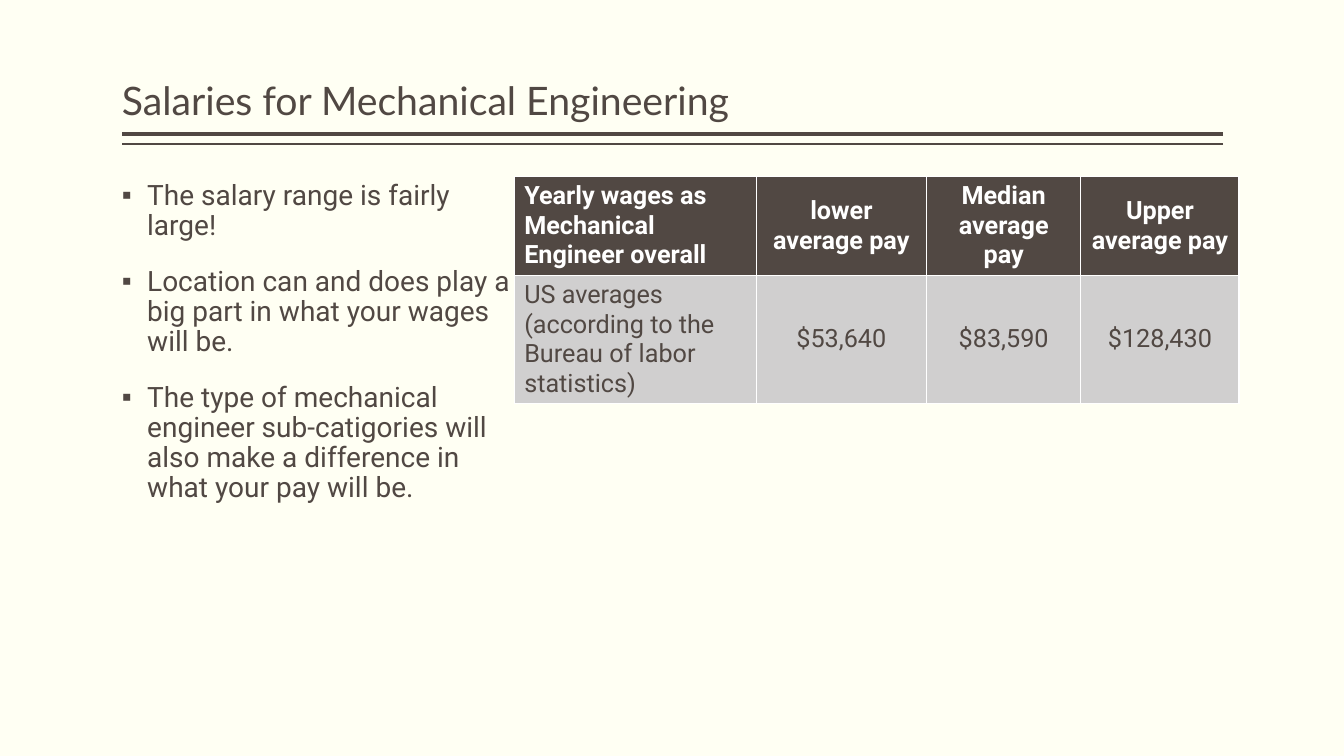
from lxml.etree import SubElement
from pptx import Presentation
from pptx.dml.color import RGBColor
from pptx.enum.shapes import MSO_CONNECTOR as LINK
from pptx.enum.text import MSO_ANCHOR as ANCHOR, MSO_AUTO_SIZE as FIT, PP_ALIGN as ALIGN
from pptx.oxml.ns import qn
from pptx.util import Inches, Pt

TITLE = "Salaries for Mechanical Engineering"
POINTS = [
    "The salary range is fairly large!",
    "Location can and does play a big part in what your wages will be.",
    "The type of mechanical engineer sub-catigories will also make a difference in what your pay will be.",
]
WAGES = [
    ("Yearly wages as Mechanical Engineer overall", "lower average pay",
     "Median average pay", "Upper average pay"),
    ("US averages (according to the Bureau of labor statistics)",
     "$53,640", "$83,590", "$128,430"),
]
COLS = (2.4, 1.69, 1.53, 1.57)
ROWS = (0.96, 1.27)
RULES = [(1.33, 3), (1.43, 1)]

BROWN = RGBColor(0x51, 0x48, 0x43)
CREAM = RGBColor(0xFF, 0xFF, 0xF3)
WHITE = RGBColor(0xFF, 0xFF, 0xFF)
GRAY = RGBColor(0xD0, 0xCF, 0xCF)

LEFT, WIDTH, TOP = 1.21, 10.92, 1.75
SPLIT = 5.1


def style(para, face, size, color, bold=False):
    for run in para.runs:
        run.font.name = face
        run.font.size = Pt(size)
        run.font.color.rgb = color
        run.font.bold = bold


def place(shape, left, top, width, height):
    shape.left, shape.top = Inches(left), Inches(top)
    shape.width, shape.height = Inches(width), Inches(height)
    frame = shape.text_frame
    frame.margin_left = frame.margin_right = 0
    frame.margin_top = frame.margin_bottom = Inches(0.05)
    frame.word_wrap = True
    frame.auto_size = FIT.NONE
    return frame


def add_rule(slide, y, weight):
    rule = slide.shapes.add_connector(
        LINK.STRAIGHT, Inches(LEFT + WIDTH), Inches(y), Inches(LEFT), Inches(y))
    rule.line.color.rgb = BROWN
    rule.line.width = Pt(weight)
    SubElement(rule._element.spPr, qn("a:effectLst"))


def add_title(slide):
    frame = place(slide.shapes.title, LEFT, 0.08, WIDTH, 1.2)
    frame.vertical_anchor = ANCHOR.BOTTOM
    frame.text = TITLE
    para = frame.paragraphs[0]
    para.alignment = ALIGN.LEFT
    para.line_spacing = 0.9
    style(para, "Lato", 28, BROWN)


def add_points(slide):
    frame = place(slide.placeholders[1], LEFT, TOP, SPLIT - LEFT, 5)
    frame.vertical_anchor = ANCHOR.TOP
    frame.text = "\n".join(POINTS)
    for para in frame.paragraphs:
        para.alignment = ALIGN.LEFT
        para.line_spacing = 0.9
        para.space_before = Pt(18)
        props = para._p.get_or_add_pPr()
        props.set("marL", str(Inches(0.25)))
        props.set("indent", str(-Inches(0.25)))
        SubElement(props, qn("a:buChar"), char="▪")
        style(para, "Roboto", 20, BROWN)


def add_wages(slide):
    table = slide.shapes.add_table(
        len(ROWS), len(COLS), Inches(SPLIT), Inches(TOP),
        Inches(sum(COLS)), Inches(sum(ROWS))).table
    for col, width in zip(table.columns, COLS):
        col.width = Inches(width)
    for r, (row, height) in enumerate(zip(WAGES, ROWS)):
        table.rows[r].height = Inches(height)
        head = r == 0
        for c, text in enumerate(row):
            cell = table.cell(r, c)
            cell.fill.solid()
            cell.fill.fore_color.rgb = BROWN if head else GRAY
            cell.vertical_anchor = ANCHOR.MIDDLE
            cell.text_frame.text = text
            para = cell.text_frame.paragraphs[0]
            para.alignment = ALIGN.CENTER if c else ALIGN.LEFT
            style(para, "Roboto", 18, WHITE if head else BROWN, head)


def main():
    deck = Presentation()
    deck.slide_width, deck.slide_height = Inches(13.33), Inches(7.5)
    slide = deck.slides.add_slide(deck.slide_layouts[1])
    slide.background.fill.solid()
    slide.background.fill.fore_color.rgb = CREAM
    for y, weight in RULES:
        add_rule(slide, y, weight)
    add_title(slide)
    add_points(slide)
    add_wages(slide)
    deck.save("out.pptx")


if __name__ == "__main__":
    main()
